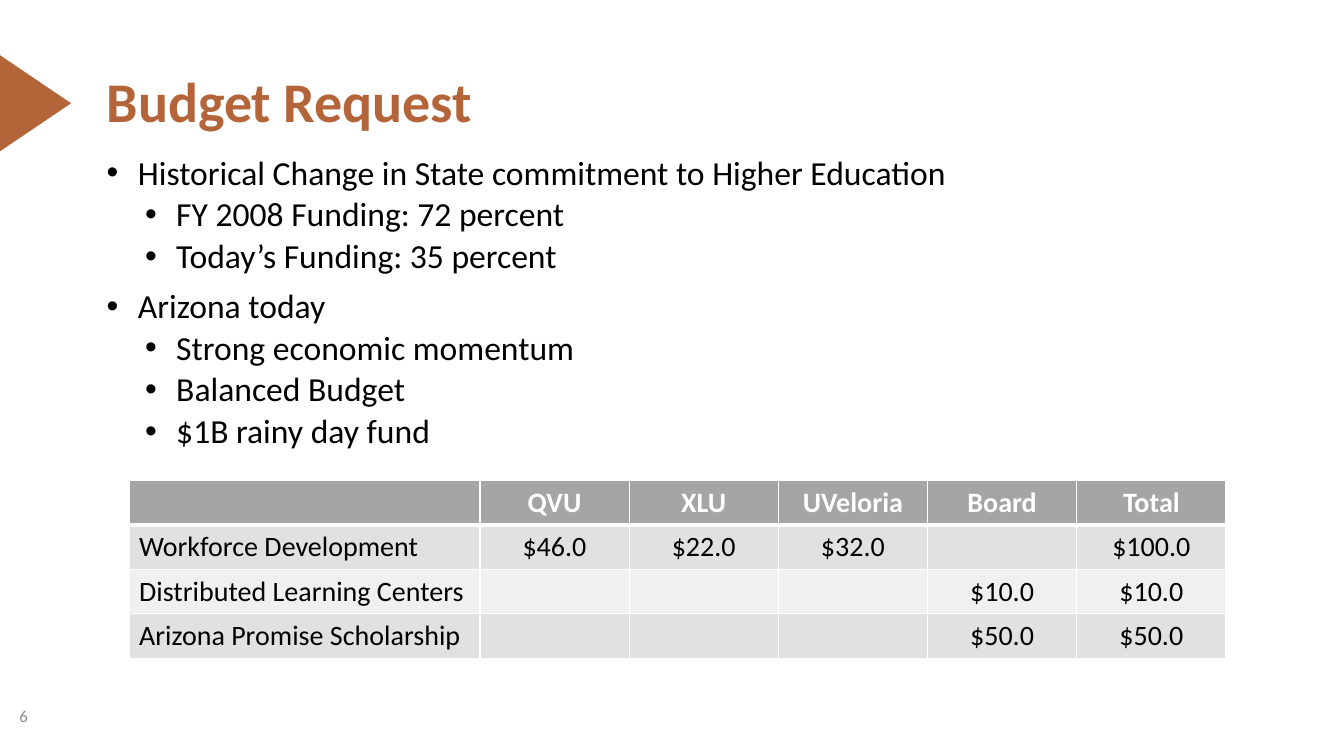
from lxml.etree import SubElement
from pptx import Presentation
from pptx.dml.color import RGBColor
from pptx.enum.shapes import MSO_SHAPE
from pptx.enum.text import MSO_ANCHOR, PP_ALIGN
from pptx.oxml.ns import qn
from pptx.util import Inches, Pt

COLORS = {
    "copper": "B36439",
    "title": "B46439",
    "text": "000000",
    "number": "8C8C8C",
    "white": "FFFFFF",
    "header": "A5A5A5",
    "odd": "E1E1E1",
    "even": "F0F0F0",
}

POINTS = [
    (0, "Historical Change in State commitment to Higher Education"),
    (1, "FY 2008 Funding: 72 percent"),
    (1, "Today’s Funding: 35 percent"),
    (0, "Arizona today"),
    (1, "Strong economic momentum"),
    (1, "Balanced Budget"),
    (1, "$1B rainy day fund"),
]

REQUESTS = [
    ["", "QVU", "XLU", "UVeloria", "Board", "Total"],
    ["Workforce Development", "$46.0", "$22.0", "$32.0", "", "$100.0"],
    ["Distributed Learning Centers", "", "", "", "$10.0", "$10.0"],
    ["Arizona Promise Scholarship", "", "", "", "$50.0", "$50.0"],
]


class SlideBuilder:
    font = "Calibri"

    def __init__(self, slide):
        self.slide = slide

    def color(self, name):
        return RGBColor.from_string(COLORS[name])

    def style(self, paragraph, size, color, bold=False, align=PP_ALIGN.LEFT):
        paragraph.alignment = align
        for run in paragraph.runs:
            run.font.name = self.font
            run.font.size = Pt(size)
            run.font.bold = bold
            run.font.color.rgb = self.color(color)

    def marker(self, left, top, width, height):
        triangle = self.slide.shapes.add_shape(
            MSO_SHAPE.ISOSCELES_TRIANGLE,
            Inches(left), Inches(top), Inches(width), Inches(height))
        triangle.rotation = 90
        triangle.shadow.inherit = False
        triangle.fill.solid()
        triangle.fill.fore_color.rgb = self.color("copper")
        triangle.line.fill.background()

    def frame(self, left, top, width, height):
        box = self.slide.shapes.add_textbox(
            Inches(left), Inches(top), Inches(width), Inches(height))
        box.text_frame.word_wrap = True
        return box.text_frame

    def label(self, text, left, top, width, height, size, color,
              bold=False, align=PP_ALIGN.LEFT, anchor=MSO_ANCHOR.TOP, spacing=1.0):
        frame = self.frame(left, top, width, height)
        frame.vertical_anchor = anchor
        frame.text = text
        frame.paragraphs[0].line_spacing = spacing
        self.style(frame.paragraphs[0], size, color, bold, align)

    def bullets(self, points, left, top, width, height, size):
        frame = self.frame(left, top, width, height)
        frame.text = "\n".join(text for _, text in points)
        for paragraph, (level, _) in zip(frame.paragraphs, points):
            paragraph.level = level
            paragraph.line_spacing = 0.9
            paragraph.space_before = Pt(3.8 if level else 10)
            self.style(paragraph, size, "text")
            properties = paragraph._p.get_or_add_pPr()
            properties.set("marL", str(Inches(0.31 + 0.38 * level)))
            properties.set("indent", str(Inches(-0.31)))
            SubElement(properties, qn("a:buFont"), typeface="Arial")
            SubElement(properties, qn("a:buChar"), char="•")

    def borders(self, cell, **widths):
        properties = cell._tc.get_or_add_tcPr()
        for side in "LRTB":
            line = SubElement(properties, qn(f"a:ln{side}"),
                              w=str(Pt(widths.get(side, 1))))
            fill = SubElement(line, qn("a:solidFill"))
            SubElement(fill, qn("a:srgbClr"), val=COLORS["white"])

    def table(self, rows, left, top, widths, row_height, size):
        table = self.slide.shapes.add_table(
            len(rows), len(widths), Inches(left), Inches(top),
            Inches(sum(widths)), Inches(row_height * len(rows))).table
        for column, width in zip(table.columns, widths):
            column.width = Inches(width)
        for r, values in enumerate(rows):
            table.rows[r].height = Inches(row_height)
            band = "header" if r == 0 else "odd" if r % 2 else "even"
            for c, value in enumerate(values):
                cell = table.cell(r, c)
                self.borders(cell, T=3 if r == 1 else 1, B=3 if r == 0 else 1)
                cell.fill.solid()
                cell.fill.fore_color.rgb = self.color(band)
                cell.text = value
                self.style(cell.text_frame.paragraphs[0], size,
                           "text" if r else "white", bold=r == 0,
                           align=PP_ALIGN.CENTER if c else PP_ALIGN.LEFT)


def main():
    presentation = Presentation()
    presentation.slide_width = Inches(13.33)
    presentation.slide_height = Inches(7.5)
    builder = SlideBuilder(
        presentation.slides.add_slide(presentation.slide_layouts[6]))

    builder.marker(-0.13, 0.67, 0.96, 0.71)
    builder.bullets(POINTS, 0.96, 1.5, 11.64, 3.18, size=24)
    builder.label("Budget Request", 0.96, 0.69, 11.64, 0.65, 40, "title",
                  bold=True, spacing=0.9)
    builder.label("6", 0, 6.9, 0.47, 0.4, 12, "number",
                  align=PP_ALIGN.CENTER, anchor=MSO_ANCHOR.MIDDLE)
    builder.table(REQUESTS, 1.28, 4.77, [3.48] + [1.48] * 5, 0.44, size=20)

    presentation.save("out.pptx")


if __name__ == "__main__":
    main()
